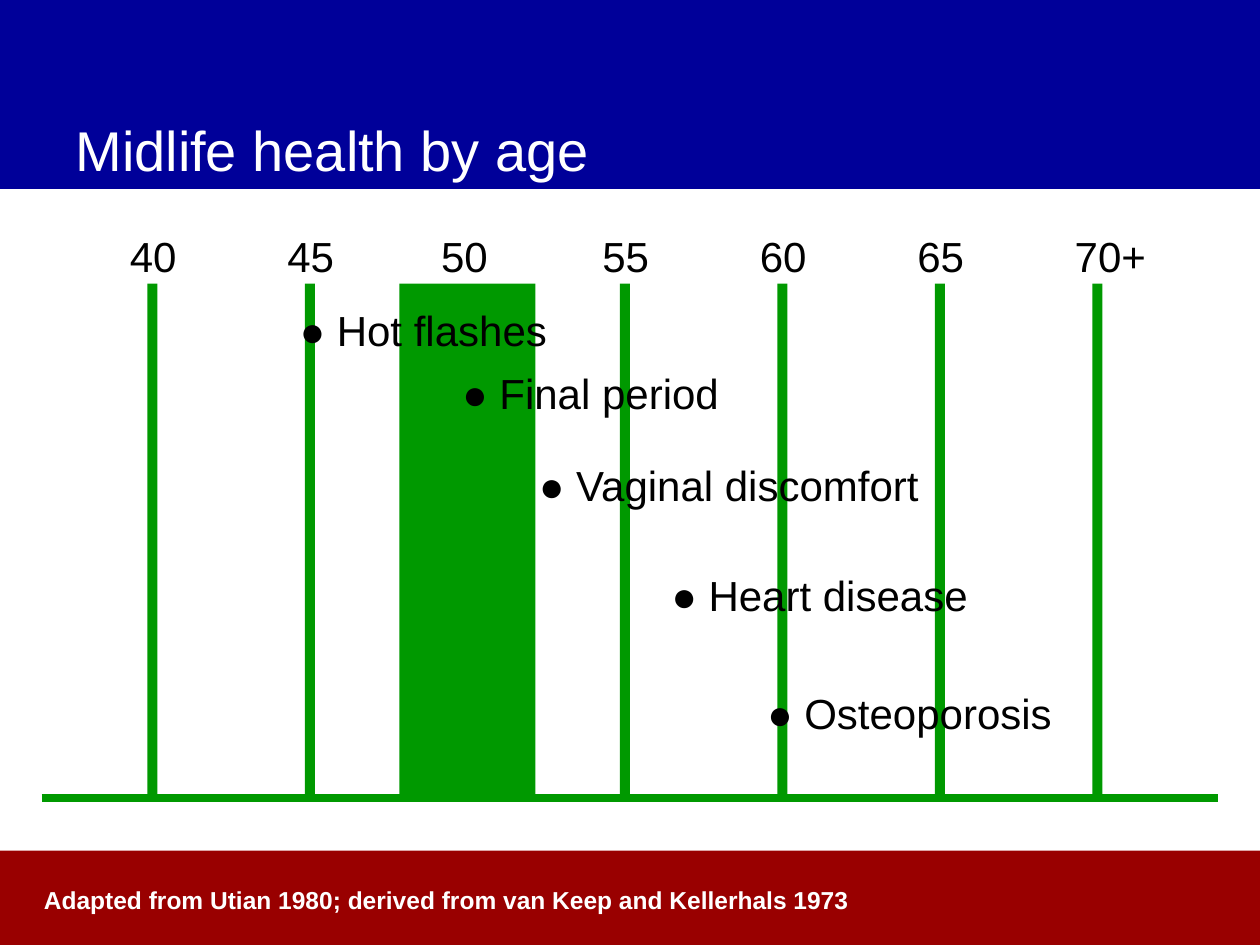
from lxml import etree
from pptx import Presentation
from pptx.dml.color import RGBColor
from pptx.enum.shapes import MSO_CONNECTOR, MSO_SHAPE
from pptx.enum.text import MSO_ANCHOR
from pptx.oxml.ns import qn
from pptx.util import Inches, Pt

RECT = MSO_SHAPE.RECTANGLE
STRAIGHT = MSO_CONNECTOR.STRAIGHT
TOP, BOTTOM = MSO_ANCHOR.TOP, MSO_ANCHOR.BOTTOM
GREEN = "009900"
WHITE = "FFFFFF"
BLACK = "000000"

prs = Presentation()
prs.slide_width = Inches(10)
prs.slide_height = Inches(7.5)
s = prs.slides.add_slide(prs.slide_layouts[6])


def add_rect(x, y, w, h, color):
    sp = s.shapes.add_shape(RECT, Inches(x), Inches(y), Inches(w), Inches(h))
    sp.shadow.inherit = False
    sp.fill.solid()
    sp.fill.fore_color.rgb = RGBColor.from_string(color)
    sp.line.fill.background()


def add_text(text, x, y, w, h, size=24, color=BLACK, bold=False, anchor=TOP, inset=True):
    tf = s.shapes.add_textbox(Inches(x), Inches(y), Inches(w), Inches(h)).text_frame
    tf.word_wrap = True
    tf.vertical_anchor = anchor
    if not inset:
        tf.margin_left = tf.margin_top = tf.margin_right = tf.margin_bottom = 0
    p = tf.paragraphs[0]
    p.text = text
    p.font.name = "Arial"
    p.font.size = Pt(size)
    p.font.bold = bold
    p.font.color.rgb = RGBColor.from_string(color)


add_rect(0, 6.75, 10, 0.75, "990000")
add_rect(0, 0, 10, 1.5, "000099")
add_text("Midlife health by age", 0.5, 0.25, 9, 1.25, 32, WHITE, anchor=BOTTOM)

for i, age in enumerate(["40", "45", "50", "55", "60", "65", "70+"]):
    x = 1.17 + 1.25 * i
    if age == "50":
        add_rect(3.17, 2.25, 1.08, 4.08, GREEN)
        label_x = 3.5
    else:
        add_rect(x, 2.25, 0.08, 4.08, GREEN)
        label_x = x - 0.14
    add_text(age, label_x, 1.83, 0.97 if age == "70+" else 0.58, 0.4, inset=False)

conditions = [
    ("Final period", 3.67, 2.92),
    ("Hot flashes", 2.38, 2.42),
    ("Vaginal discomfort", 4.28, 3.65),
    ("Heart disease", 5.33, 4.52),
    ("Osteoporosis", 6.09, 5.46),
]
for name, x, y in conditions:
    add_text(f"● {name}", x, y, 3.33, 0.4, inset=False)

axis = s.shapes.add_connector(STRAIGHT, Inches(0.33), Inches(6.33), Inches(9.67), Inches(6.33))
axis.line.color.rgb = RGBColor.from_string(GREEN)
axis.line.width = Pt(4.5)
etree.SubElement(axis._element.spPr, qn("a:effectLst"))

add_text("Adapted from Utian 1980; derived from van Keep and Kellerhals 1973",
         0.25, 6.91, 8.75, 0.4, 14, WHITE, bold=True, anchor=BOTTOM)

prs.save("out.pptx")
